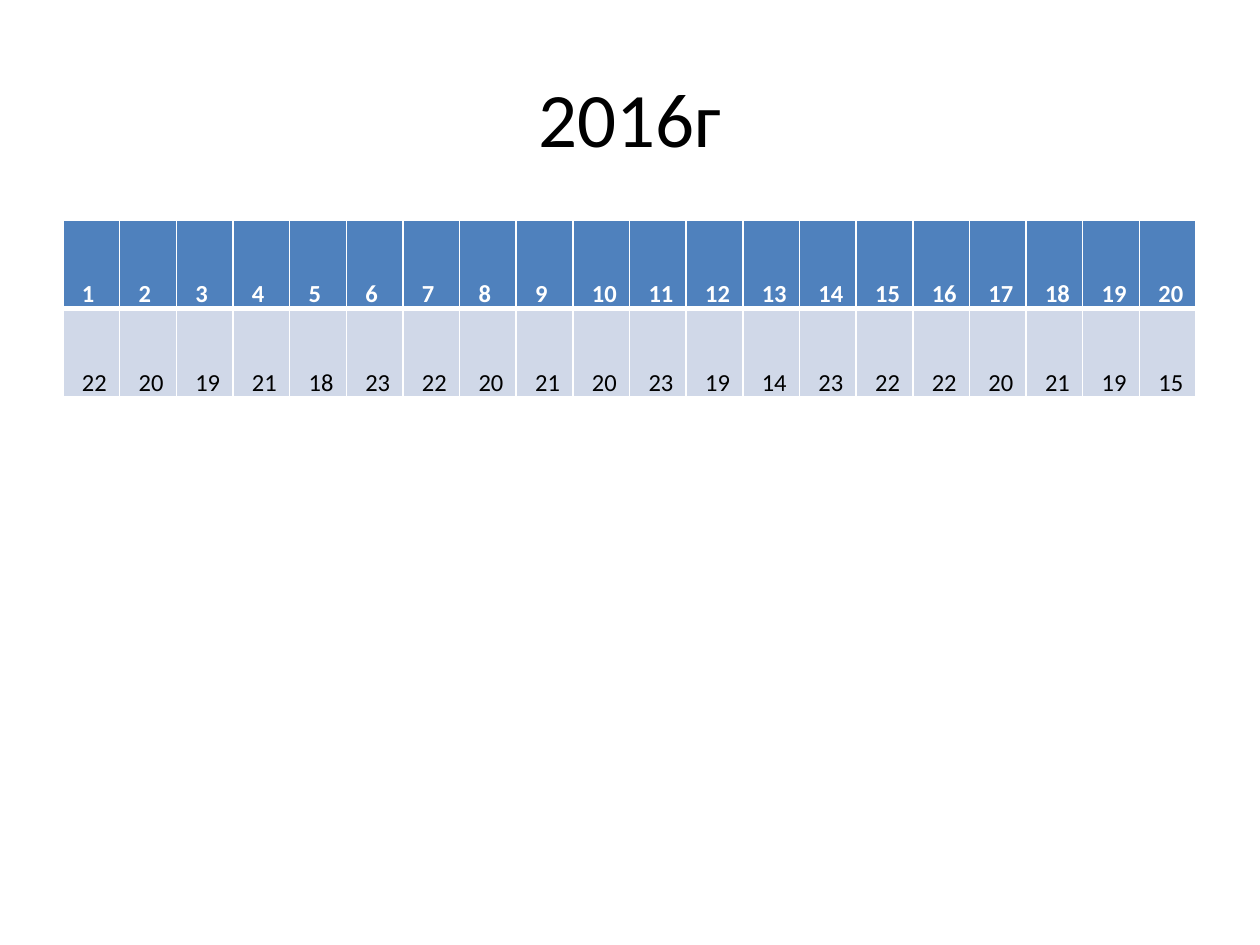
from lxml import etree
from pptx import Presentation
from pptx import util as u
from pptx.dml.color import RGBColor
from pptx.enum import text
from pptx.oxml import ns

PX = 914400 // 126  # EMU per px

HEADER, BODY = "4F81BD", "D0D8E8"
WHITE, BLACK = "FFFFFF", "000000"
COUNTS = [22, 20, 19, 21, 18, 23, 22, 20, 21, 20,
          23, 19, 14, 23, 22, 22, 20, 21, 19, 15]


def px(*lengths):
    return [u.Emu(length * PX) for length in lengths]


def rgb(color):
    return RGBColor.from_string(color)


class Board:
    font = "Calibri"

    def __init__(self, slide):
        self.slide = slide

    def style(self, paragraph, size, color, bold=False):
        for run in paragraph.runs:
            run.font.name = self.font
            run.font.size = u.Pt(size)
            run.font.bold = bold
            run.font.color.rgb = rgb(color)

    def title(self, words, box, size, color):
        frame = self.slide.shapes.add_textbox(*px(*box)).text_frame
        frame.word_wrap = True
        frame.vertical_anchor = text.MSO_ANCHOR.MIDDLE
        frame.text = words
        heading = frame.paragraphs[0]
        heading.alignment = text.PP_ALIGN.CENTER
        self.style(heading, size, color)

    def borders(self, cell, widths, color):
        """Draw the cell's sides; widths maps L, R, T, B to points."""
        properties = cell._tc.get_or_add_tcPr()
        for position, (side, width) in enumerate(widths.items()):
            line = etree.Element(ns.qn(f"a:ln{side}"), w=str(u.Pt(width)))
            fill = etree.SubElement(line, ns.qn("a:solidFill"))
            etree.SubElement(fill, ns.qn("a:srgbClr"), val=color)
            properties.insert(position, line)

    def cell(self, cell, value, fill, color, bold, widths):
        cell.fill.solid()
        cell.fill.fore_color.rgb = rgb(fill)
        cell.margin_left, cell.margin_right = px(9, 9)
        cell.margin_top = cell.margin_bottom = 0
        cell.text_frame.text = str(value)
        number = cell.text_frame.paragraphs[0]
        number.line_spacing = 3.0
        indent = number._p.get_or_add_pPr()
        indent.set("marL", str(10 * PX))
        indent.set("indent", "0")
        self.style(number, 14, color, bold)
        self.borders(cell, widths, WHITE)

    def table(self, rows, looks, box):
        grid = self.slide.shapes.add_table(
            len(rows), len(rows[0]), *px(*box)).table
        grid.horz_banding = False
        for r, (values, look) in enumerate(zip(rows, looks)):
            for c, value in enumerate(values):
                self.cell(grid.cell(r, c), value, *look)


def main():
    deck = Presentation()
    deck.slide_width, deck.slide_height = px(1260, 945)
    board = Board(deck.slides.add_slide(deck.slide_layouts[6]))

    # Year heading
    board.title("2016г", (63, 38, 1134, 157), 44, BLACK)

    # Numbered columns with one count each
    header_look = (HEADER, WHITE, True, {"L": 1, "R": 1, "T": 1, "B": 3})
    count_look = (BODY, BLACK, False, {"L": 1, "R": 1, "T": 3, "B": 1})
    board.table([range(1, len(COUNTS) + 1), COUNTS],
                [header_look, count_look], (63, 220, 1134, 176))

    deck.save("out.pptx")


if __name__ == "__main__":
    main()
